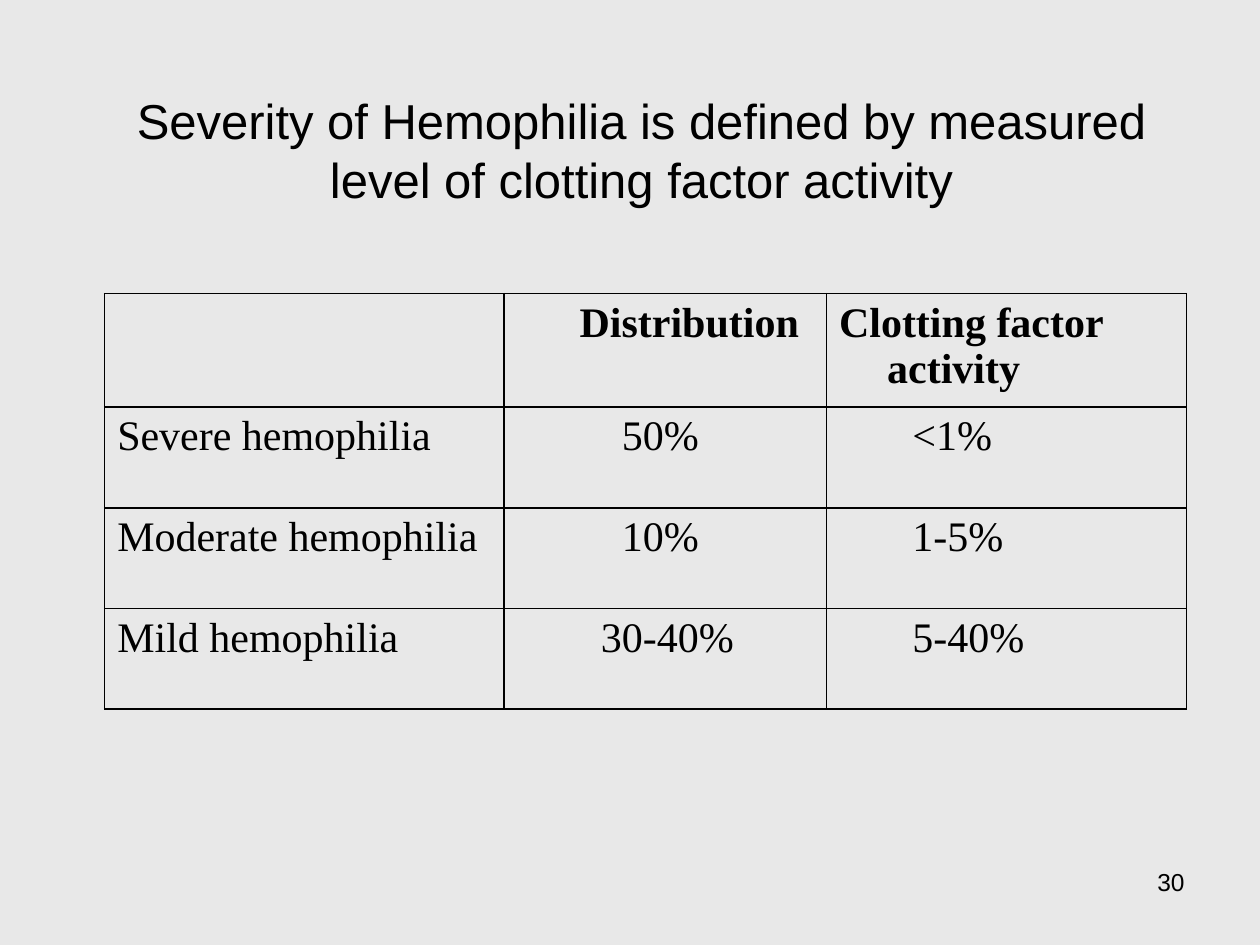
import pptx
import pptx.util
import pptx.dml.color
import pptx.enum.text
import pptx.oxml
import pptx.oxml.ns

Cm = pptx.util.Cm
Pt = pptx.util.Pt
ALIGN = pptx.enum.text.PP_ALIGN

BLACK = pptx.dml.color.RGBColor(0x00, 0x00, 0x00)
GREY = pptx.dml.color.RGBColor(0xE8, 0xE8, 0xE8)

TITLE = "Severity of Hemophilia is defined by measured level of clotting factor activity"
PAGE = "30"
ROWS = [
    ["", "Distribution", "Clotting factor activity"],
    ["Severe hemophilia", "50%", "<1%"],
    ["Moderate hemophilia", "10%", "1-5%"],
    ["Mild hemophilia", "30-40%", "5-40%"],
]
HANGING = (0.97, -0.97)
INDENTS = [
    [HANGING, (1.27, 0), HANGING],
    [HANGING, (2.12, 0), (1.48, 0)],
    [HANGING, (2.12, 0), (1.48, 0)],
    [HANGING, (1.7, 0), (1.48, 0)],
]
COL_WIDTHS = [8.05, 6.5, 7.26]
ROW_HEIGHTS = [2.11, 2.03, 2.03, 2.03]
TABLE_LEFT, TABLE_TOP = 2.11, 5.92

TITLE_FONT = {"name": "Arial", "size": Pt(28), "bold": False}
PAGE_FONT = {"name": "Arial", "size": Pt(14), "bold": False}
HEAD_FONT = {"name": "Times New Roman", "size": Pt(24), "bold": True}
BODY_FONT = {**HEAD_FONT, "bold": False}


def write(p, text, font):
    r = p.add_run()
    r.text = text
    for key, value in font.items():
        setattr(r.font, key, value)
    r.font.color.rgb = BLACK


def add_text(s, box, text, font, align, before=0):
    tf = s.shapes.add_textbox(*map(Cm, box)).text_frame
    tf.word_wrap = True
    p = tf.paragraphs[0]
    p.alignment = align
    p.space_before = Pt(before)
    write(p, text, font)


def add_borders(cell):
    tcPr = cell._tc.get_or_add_tcPr()
    for side in ("lnL", "lnR", "lnT", "lnB"):
        tcPr.append(pptx.oxml.parse_xml(
            f'<a:{side} {pptx.oxml.ns.nsdecls("a")} w="{Pt(1)}">'
            f'<a:solidFill><a:srgbClr val="{BLACK}"/></a:solidFill></a:{side}>'))


def add_severity_table(s):
    size = (sum(COL_WIDTHS), sum(ROW_HEIGHTS))
    table = s.shapes.add_table(len(ROWS), len(COL_WIDTHS),
                               *map(Cm, (TABLE_LEFT, TABLE_TOP, *size))).table
    table.first_row = table.horz_banding = False
    for column, width in zip(table.columns, COL_WIDTHS):
        column.width = Cm(width)
    for i, (row, height) in enumerate(zip(table.rows, ROW_HEIGHTS)):
        row.height = Cm(height)
        for cell, text, (margin, first) in zip(row.cells, ROWS[i], INDENTS[i]):
            add_borders(cell)
            cell.fill.background()
            p = cell.text_frame.paragraphs[0]
            pPr = p._p.get_or_add_pPr()
            pPr.set("marL", str(Cm(margin)))
            pPr.set("indent", str(Cm(first)))
            if text:
                write(p, text, BODY_FONT if i else HEAD_FONT)


def main():
    prs = pptx.Presentation()
    prs.slide_width, prs.slide_height = Cm(25.4), Cm(19.05)
    s = prs.slides.add_slide(prs.slide_layouts[6])
    s.background.fill.solid()
    s.background.fill.fore_color.rgb = GREY
    add_text(s, (18.21, 17.35, 5.92, 1.32), PAGE, PAGE_FONT, ALIGN.RIGHT)
    add_severity_table(s)
    add_text(s, (1.5, 1.7, 22.86, 4.24), TITLE, TITLE_FONT, ALIGN.CENTER, 5.6)
    prs.save("out.pptx")


if __name__ == "__main__":
    main()
